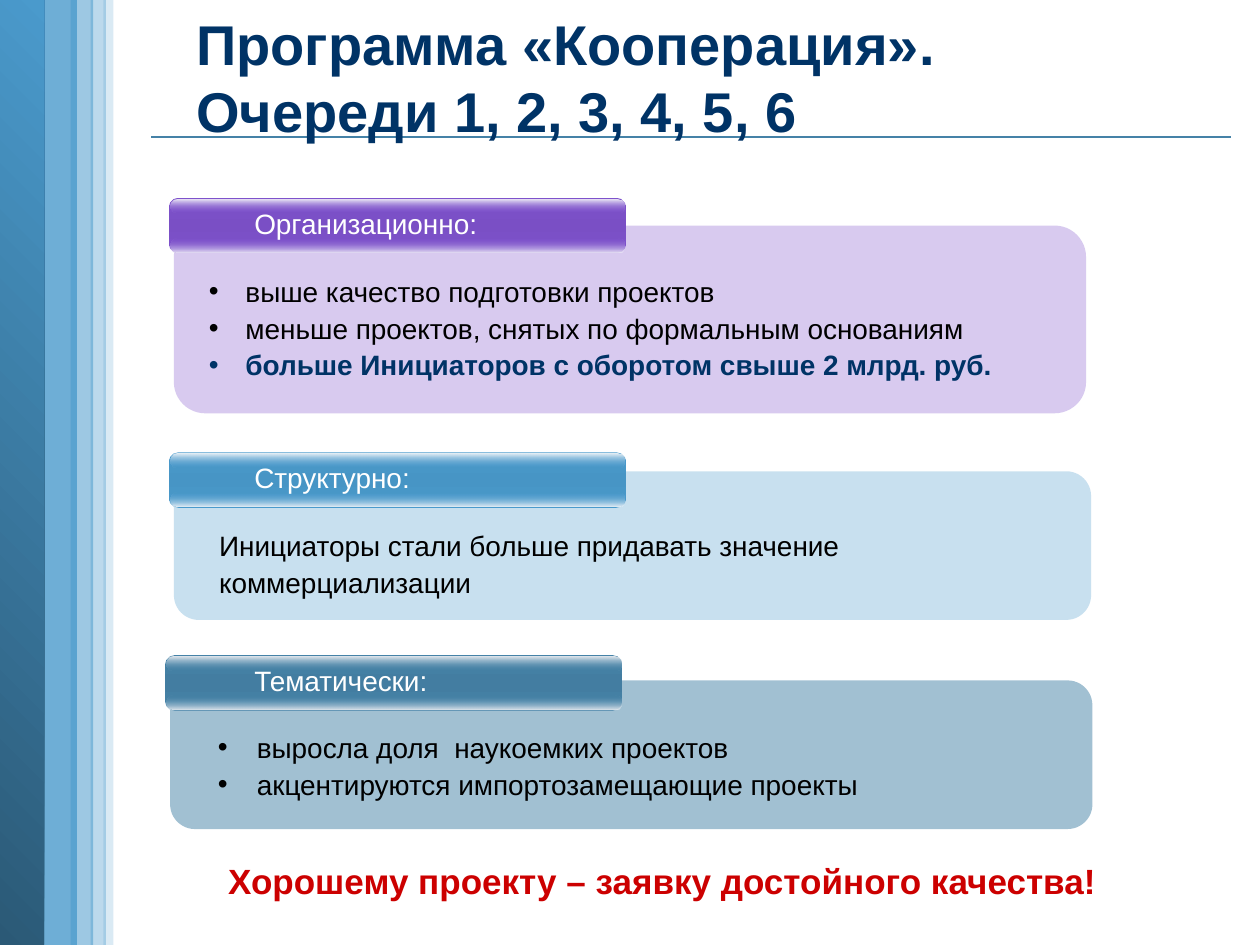
from pptx import Presentation
from pptx.dml.color import RGBColor
from pptx.enum.shapes import MSO_CONNECTOR as Conn, MSO_SHAPE as Shape
from pptx.enum.text import MSO_ANCHOR as Anchor, PP_ALIGN as Align
from pptx.oxml.ns import qn
from pptx.util import Inches, Pt
from lxml.etree import SubElement as Sub

WHITE = RGBColor(0xFF, 0xFF, 0xFF)
BLACK = RGBColor(0, 0, 0)
NAVY = RGBColor(0x00, 0x33, 0x66)
RED = RGBColor(0xCC, 0x00, 0x00)
DARK = RGBColor(0x2B, 0x59, 0x76)
VIOLET = RGBColor(0x7E, 0x52, 0xCC)
PLUM = RGBColor(0x7A, 0x4F, 0xC5)
LILAC = RGBColor(0xEC, 0xE9, 0xF6)
BLUE = RGBColor(0x4A, 0x9A, 0xCC)
AZURE = RGBColor(0x47, 0x95, 0xC5)
ICE = RGBColor(0xEE, 0xF3, 0xF8)
STEEL = RGBColor(0x45, 0x82, 0xA7)
SLATE = RGBColor(0x43, 0x7D, 0xA1)
MIST = RGBColor(0xE6, 0xEA, 0xEF)


def fade(node, alpha):
    """Set the opacity of a colour node in percent."""
    if alpha < 100:
        Sub(node, qn("a:alpha"), val=str(alpha * 1000))


def add_box(slide, box, kind=Shape.RECTANGLE, round_by=None):
    """Add a preset shape without line or shadow."""
    shape = slide.shapes.add_shape(kind, *map(Inches, box))
    shape.shadow.inherit = False
    shape.line.fill.background()
    if round_by is not None:
        shape.adjustments[0] = round_by
    return shape


def fill_flat(shape, color, alpha):
    """Fill a shape with one translucent colour."""
    shape.fill.solid()
    shape.fill.fore_color.rgb = color
    fade(next(shape._element.spPr.iter(qn("a:srgbClr"))), alpha)


def fill_blend(shape, stops, angle=270):
    """Fill a shape with a gradient of (place, colour, alpha) stops."""
    shape.fill.gradient()
    shape.fill.gradient_angle = angle
    items = next(shape._element.spPr.iter(qn("a:gsLst")))
    for old in list(items):
        items.remove(old)
    for place, color, alpha in stops:
        stop = Sub(items, qn("a:gs"), pos=str(place * 1000))
        fade(Sub(stop, qn("a:srgbClr"), val=str(color)), alpha)


def add_text(slide, box, lines, size, color, bold=False, gap=1.0, indent=None, wrap=True):
    """Add a text box, with bullets when an indent is given."""
    frame = slide.shapes.add_textbox(*map(Inches, box)).text_frame
    frame.word_wrap = wrap
    frame.text = "\n".join(lines)
    for para in frame.paragraphs:
        para.line_spacing = gap
        if indent:
            props = para._p.get_or_add_pPr()
            props.set("marL", str(Inches(indent)))
            props.set("indent", str(-Inches(indent)))
            Sub(props, qn("a:buFont"), typeface="Arial")
            Sub(props, qn("a:buChar"), char="•")
        for run in para.runs:
            font = run.font
            font.name, font.size, font.bold = "Arial", Pt(size), bold
            font.color.rgb = color
    return frame


def add_side(slide, left, top, height):
    """Draw the striped band along the left edge."""
    for x, width, alpha in ((0.3, 0.31, 80), (None, 0.36, 100), (0.82, 0.08, 20),
                            (0.56, 0.18, 54), (0.72, 0.12, 37)):
        if x is None:
            edge = add_box(slide, (left - 0.01, top, width, height))
            fill_blend(edge, [(0, DARK, 100), (100, BLUE, 100)], 45)
        else:
            fill_flat(add_box(slide, (left + x, top, width, height)), BLUE, alpha)


def add_head(slide, left, top, width, height):
    """Draw the title and the rule across it."""
    rule = slide.shapes.add_connector(
        Conn.STRAIGHT, Inches(left - 0.26), Inches(top + 1.04),
        Inches(left + 8.31), Inches(top + 1.04))
    rule.line.color.rgb = STEEL
    rule.line.width = Pt(1)
    Sub(rule._element.spPr, qn("a:effectLst"))
    frame = add_text(slide, (left, top, width, height),
                     ["Программа «Кооперация».\vОчереди 1, 2, 3, 4, 5, 6"], 32, NAVY, True)
    frame.vertical_anchor = Anchor.MIDDLE


def add_tab(slide, left, top, label, color, deep, shine):
    """Draw a glossy heading tab."""
    body = add_box(slide, (left, top, 3.63, 0.44), Shape.ROUNDED_RECTANGLE, 0.175)
    fill_blend(body, [(0, color, 100), (50, deep, 100), (100, color, 100)])
    for drop, ends in ((0.32, ((color, 0), (shine, 100))),
                       (0.01, ((shine, 100), (color, 0)))):
        gloss = add_box(slide, (left + 0.01, top + drop, 3.61, 0.11),
                        Shape.ROUNDED_RECTANGLE, 0.5)
        fill_blend(gloss, [(0, *ends[0]), (100, *ends[1])])
    add_text(slide, (1.92, top + 0.02, 2, 0.37), [label], 16, WHITE, wrap=False)


def add_panel(slide, box, alpha, tab, look, label, text, lines, indent=None):
    """Draw a tinted panel with its tab and text."""
    left, top = box[:2]
    fill_flat(add_box(slide, box, Shape.ROUNDED_RECTANGLE, 0.167), look[0], alpha)
    add_tab(slide, left - 0.04, top - tab, label, *look)
    x, y, width, height = text
    return add_text(slide, (left + x, top + y, width, height), lines, 16, BLACK,
                    gap=1.1, indent=indent)


def add_foot(slide, box):
    """Write the closing call."""
    frame = add_text(slide, box, ["Хорошему проекту – заявку достойного качества!"],
                     20, RED, True, 1.1)
    frame.paragraphs[0].alignment = Align.CENTER


def main():
    """Build the slide and save it."""
    deck = Presentation()
    deck.slide_width, deck.slide_height = Inches(10), Inches(7.5)
    slide = deck.slides.add_slide(deck.slide_layouts[6])
    add_side(slide, 0, 0, 7.5)
    add_head(slide, 1.46, 0.05, 8.5, 1.11)
    frame = add_panel(
        slide, (1.38, 1.79, 7.24, 1.49), 30, 0.22, (VIOLET, PLUM, LILAC),
        "Организационно:", (0.18, 0.31, 7.46, 1.25),
        ["выше качество подготовки проектов",
         "меньше проектов, снятых по формальным основаниям",
         "больше Инициаторов с оборотом свыше 2 млрд. руб."], 0.29)
    font = frame.paragraphs[-1].runs[0].font
    font.bold, font.color.rgb = True, NAVY
    add_panel(
        slide, (1.38, 3.74, 7.28, 1.18), 30, 0.15, (BLUE, AZURE, ICE),
        "Структурно:", (0.26, 0.38, 6.32, 0.67),
        ["Инициаторы стали больше придавать значение коммерциализации"])
    add_panel(
        slide, (1.35, 5.4, 7.32, 1.18), 50, 0.2, (STEEL, SLATE, MIST),
        "Тематически:", (0.28, 0.32, 6.32, 0.69),
        ["выросла доля  наукоемких проектов",
         "акцентируются импортозамещающие проекты"], 0.31)
    add_foot(slide, (1.63, 6.74, 7.25, 0.47))
    deck.save("out.pptx")


if __name__ == "__main__":
    main()
